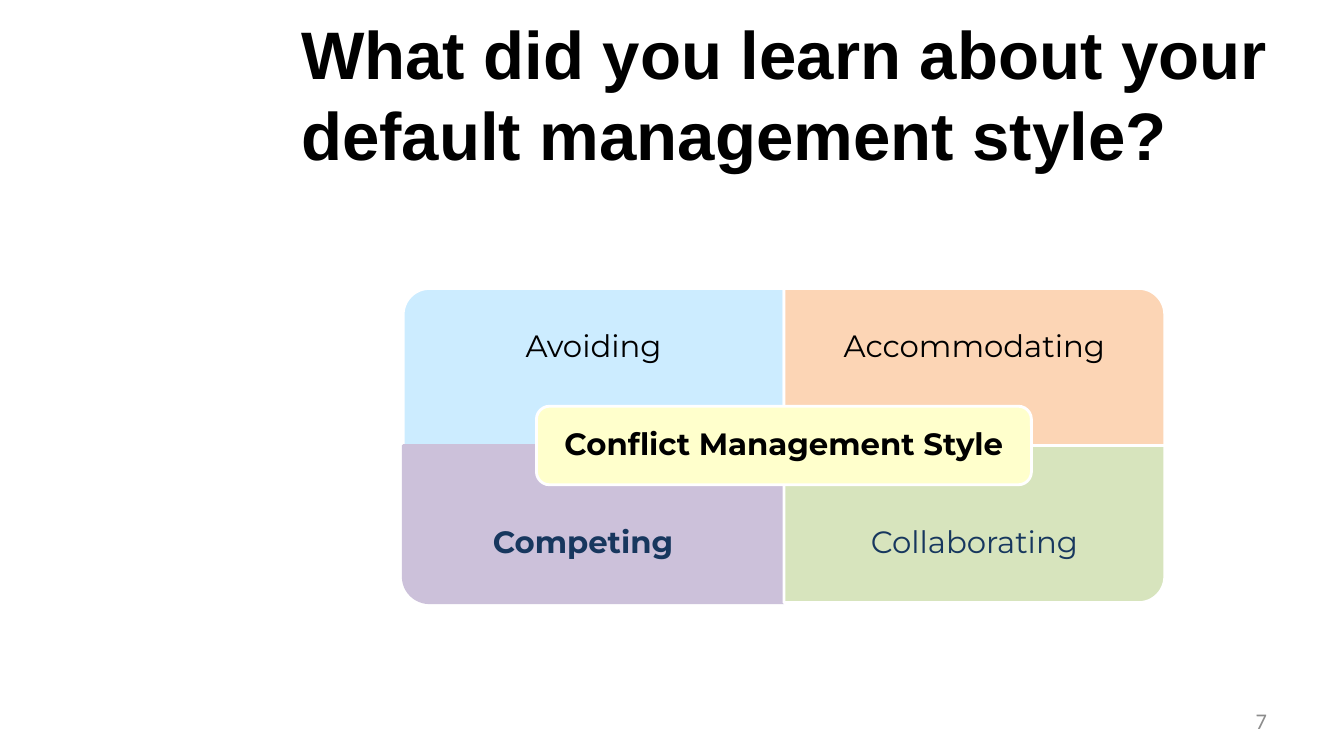
from pptx import Presentation
from pptx.dml.color import RGBColor
from pptx.enum.shapes import MSO_SHAPE
from pptx.enum.text import MSO_ANCHOR, PP_ALIGN
from pptx.util import Pt

# Style name, fill, outline, text colour, bold, rotation; row by row.
# The rotation turns the single rounded corner outwards.
STYLES = [
    ("Avoiding", "CCECFF", "FFFFFF", "000000", False, 270),
    ("Accommodating", "FCD5B5", "FFFFFF", "000000", False, 0),
    ("Competing\t", "CCC1DA", "CCC1DA", "17375E", True, 180),
    ("Collaborating", "D7E4BD", "FFFFFF", "17375E", False, 90),
]


def rgb(hex_colour):
    return RGBColor.from_string(hex_colour)


def write(holder, text, font_name, size, colour, bold=False,
          align=PP_ALIGN.LEFT, inset=None, spacing=None):
    frame = holder.text_frame
    frame.word_wrap = True
    frame.vertical_anchor = MSO_ANCHOR.MIDDLE
    if inset is not None:
        frame.margin_left = frame.margin_right = Pt(inset)
        frame.margin_top = frame.margin_bottom = Pt(inset)
    frame.text = text
    paragraph = frame.paragraphs[0]
    paragraph.alignment = align
    if spacing is not None:
        paragraph.line_spacing = spacing
    for run in paragraph.runs:
        run.font.name = font_name
        run.font.size = Pt(size)
        run.font.bold = bold
        run.font.color.rgb = rgb(colour)


def add_text(slide, box, text, *style, **options):
    holder = slide.shapes.add_textbox(*map(Pt, box))
    write(holder, text, *style, **options)


def add_panel(slide, preset, box, fill, outline):
    panel = slide.shapes.add_shape(preset, *map(Pt, box))
    panel.shadow.inherit = False
    panel.fill.solid()
    panel.fill.fore_color.rgb = rgb(fill)
    panel.line.color.rgb = rgb(outline)
    panel.line.width = Pt(2)
    return panel


def add_quadrant(slide, box, style, caption_top):
    name, fill, outline, colour, bold, rotation = style
    left, top, width, height = box
    panel_box = box
    if rotation in (90, 270):
        # A quarter turn swaps the sides about the same centre
        shift = (width - height) / 2
        panel_box = (left + shift, top - shift, height, width)
    panel = add_panel(slide, MSO_SHAPE.ROUND_1_RECTANGLE, panel_box, fill, outline)
    panel.rotation = rotation
    add_text(slide, (left, caption_top, width, height * 0.75), name,
             "Montserrat", 22, colour, bold,
             align=PP_ALIGN.CENTER, inset=12.25, spacing=0.9)


def add_style_matrix(slide, left, top, width, height):
    cell_width, cell_height = width / 2, height / 2
    # Four quadrants, captions kept towards the outer edges
    for index, style in enumerate(STYLES):
        row, column = divmod(index, 2)
        cell_top = top + row * cell_height
        cell = (left + column * cell_width, cell_top, cell_width, cell_height)
        add_quadrant(slide, cell, style, cell_top + row * cell_height / 4)

    # Central label
    label_width, label_height = width * 0.65, height / 4
    label_box = (left + (width - label_width) / 2, top + (height - label_height) / 2,
                 label_width, label_height)
    label = add_panel(slide, MSO_SHAPE.ROUNDED_RECTANGLE, label_box, "FFFFCC", "FFFFFF")
    write(label, "Conflict Management Style", "Montserrat", 22, "000000", True,
          align=PP_ALIGN.CENTER, inset=6.5, spacing=0.9)


def main():
    presentation = Presentation()
    presentation.slide_width, presentation.slide_height = Pt(960), Pt(540)
    slide = presentation.slides.add_slide(presentation.slide_layouts[6])

    # Title
    add_text(slide, (208, 21.5, 736, 90),
             "What did you learn about your default management style?",
             "Arial", 48, "000000", True)
    add_style_matrix(slide, 288, 206, 544, 224.5)
    # Page number
    add_text(slide, (688, 500.5, 224, 28.75), "7", "Calibri", 16, "8C8C8C",
             align=PP_ALIGN.RIGHT)

    presentation.save("out.pptx")


if __name__ == "__main__":
    main()
